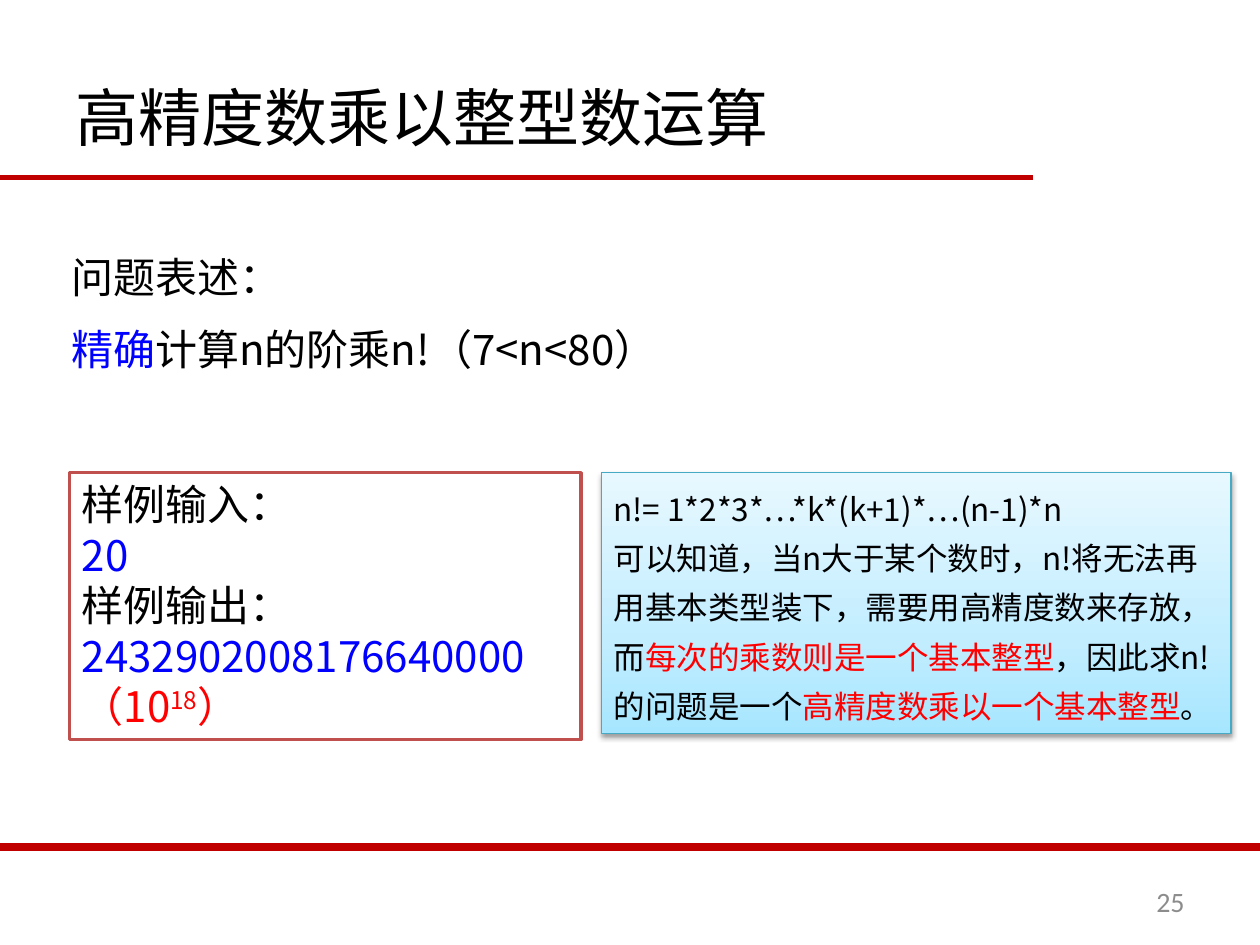
"""Build the slide on multiplying a high-precision number by an integer."""
from copy import deepcopy

from lxml.etree import SubElement
from pptx import Presentation
from pptx.dml.color import RGBColor
from pptx.enum.shapes import MSO_CONNECTOR, MSO_SHAPE
from pptx.enum.text import MSO_ANCHOR, MSO_AUTO_SIZE, PP_ALIGN
from pptx.oxml.ns import qn
from pptx.util import Cm, Pt

BLACK = RGBColor(0x00, 0x00, 0x00)
WHITE = RGBColor(0xFF, 0xFF, 0xFF)
BLUE = RGBColor(0x00, 0x00, 0xFF)
RED = RGBColor(0xFF, 0x00, 0x00)
GREY = RGBColor(0x8C, 0x8C, 0x8C)
RULE_RED = RGBColor(0xC0, 0x00, 0x00)
BOX_RED = RGBColor(0xC0, 0x50, 0x4D)
BOX_TEAL = RGBColor(0x46, 0xAA, 0xC5)
SKY = [(0, RGBColor(0xA7, 0xE6, 0xFF)), (0.35, RGBColor(0xC1, 0xED, 0xFF)),
       (1, RGBColor(0xE7, 0xF8, 0xFF))]
CJK = "Noto Sans CJK SC"


def write(sp, paragraphs, size, font=CJK, anchor=MSO_ANCHOR.TOP, **para_format):
    tf = sp.text_frame
    tf.word_wrap = True
    tf.vertical_anchor = anchor
    para_format = {"alignment": PP_ALIGN.LEFT, **para_format}
    for i, runs in enumerate(paragraphs):
        p = tf.add_paragraph() if i else tf.paragraphs[0]
        for name, value in para_format.items():
            setattr(p, name, value)
        for text, color, *baseline in runs:
            r = p.add_run()
            r.text = text
            for name, value in {"size": Pt(size), "name": font}.items():
                setattr(r.font, name, value)
            r.font.color.rgb = color
            rPr = r.font._element
            SubElement(rPr, qn("a:ea"), typeface=font)
            if baseline:
                rPr.set("baseline", str(baseline[0] * 1000))


prs = Presentation()
prs.slide_width, prs.slide_height = Cm(25.4), Cm(19.05)
s = prs.slides.add_slide(prs.slide_layouts[5])

for y, right, width in [(3.58, 20.83, 3), (17.07, 25.4, 4.5)]:
    rule = s.shapes.add_connector(MSO_CONNECTOR.STRAIGHT, 0, Cm(y), Cm(right), Cm(y))
    rule.line.color.rgb = RULE_RED
    rule.line.width = Pt(width)
    SubElement(rule._element.spPr, qn("a:effectLst"))

title = s.shapes.title
place = {"left": Cm(1.27), "top": Cm(0.76), "width": Cm(22.86), "height": Cm(3.18)}
for name, value in place.items():
    setattr(title, name, value)
write(title, [[("高精度数乘以整型数运算", BLACK)]], 36, anchor=MSO_ANCHOR.MIDDLE)

problem = s.shapes.add_textbox(Cm(1.19), Cm(4.95), Cm(22.43), Cm(2.82))
write(problem, [
    [("问题表述：", BLACK)],
    [("精确", BLUE), ("计算n的阶乘n!（7<n<80）", BLACK)],
], 24, space_before=Pt(12))

sample = s.shapes.add_shape(MSO_SHAPE.RECTANGLE, Cm(1.4), Cm(9.53), Cm(10.31), Cm(5.38))
sample.fill.solid()
sample.fill.fore_color.rgb = WHITE
write(sample, [
    [("样例输入：", BLACK)],
    [("20", BLUE)],
    [("样例输出：", BLACK)],
    [("2432902008176640000", BLUE)],
    [("（10", RED), ("18", RED, 30), ("）", RED)],
], 24)

number = s.shapes.add_textbox(Cm(18.21), Cm(17.65), Cm(5.92), Cm(1.02))
write(number, [[("25", GREY)]], 16, "Calibri", MSO_ANCHOR.MIDDLE, alignment=PP_ALIGN.RIGHT)

note = s.shapes.add_shape(MSO_SHAPE.RECTANGLE, Cm(12.12), Cm(9.53), Cm(12.7), Cm(5.26))
note.fill.gradient()
note.fill.gradient_angle = 90
stop_list = note._element.spPr.find(qn("a:gradFill")).find(qn("a:gsLst"))
stop_list.append(deepcopy(stop_list[0]))
for stop, (position, color) in zip(note.fill.gradient_stops, SKY):
    stop.position = position
    stop.color.rgb = color
write(note, [
    [("n!= 1*2*3*…*k*(k+1)*…(n-1)*n", BLACK)],
    [("可以知道，当n大于某个数时，n!将无法再用基本类型装下，需要用高精度数来存放，而", BLACK),
     ("每次的乘数则是一个基本整型", RED),
     ("，因此求n!的问题是一个", BLACK),
     ("高精度数乘以一个基本整型", RED),
     ("。", BLACK)],
], 18, line_spacing=1.3)

for sp, color, width in [(sample, BOX_RED, 2), (note, BOX_TEAL, 0.75)]:
    sp.line.color.rgb = color
    sp.line.width = Pt(width)
    sp.shadow.inherit = False
for sp in (problem, sample, note):
    sp.text_frame.auto_size = MSO_AUTO_SIZE.SHAPE_TO_FIT_TEXT

effects = note._element.spPr.find(qn("a:effectLst"))
shadow = SubElement(effects, qn("a:outerShdw"), blurRad=str(Pt(3.1)), dist=str(Pt(1.6)),
                    dir="5400000", rotWithShape="0")
shade = SubElement(shadow, qn("a:srgbClr"), val=str(BLACK))
SubElement(shade, qn("a:alpha"), val="38000")

prs.save("out.pptx")
